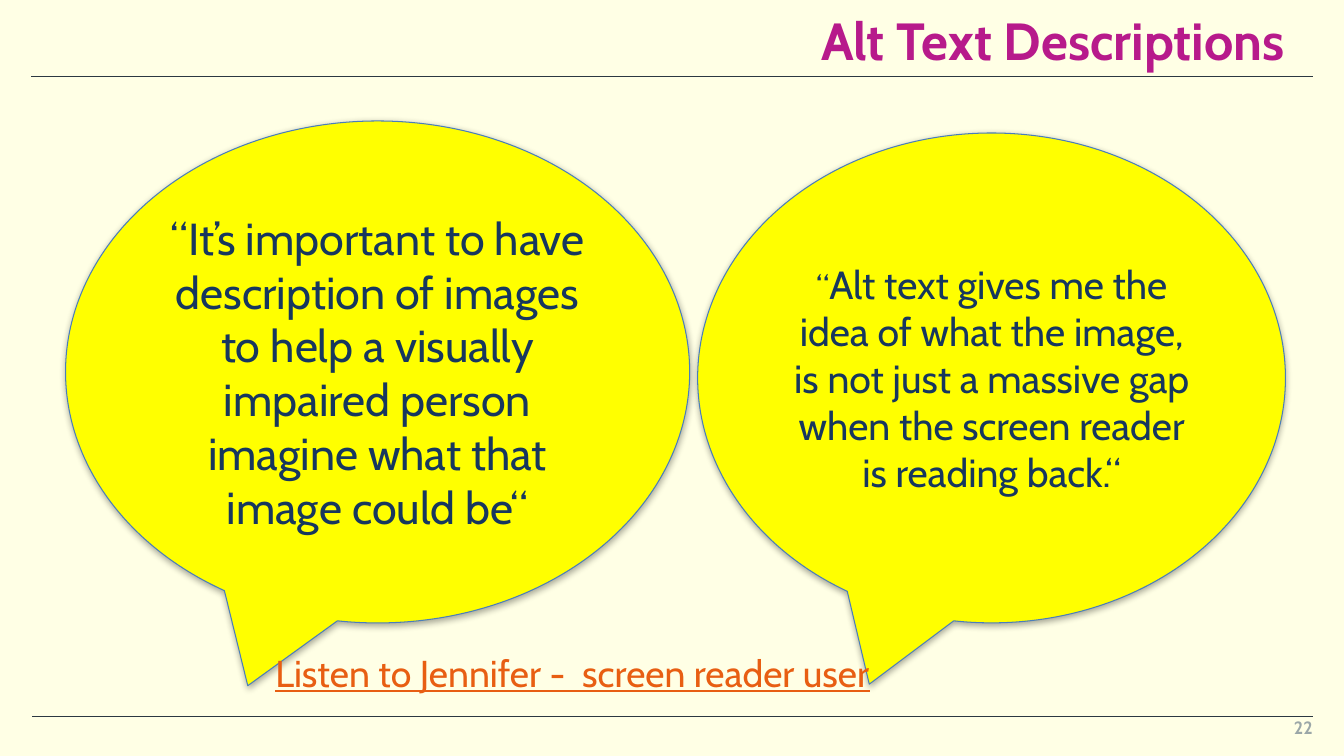
from dataclasses import dataclass

import pptx
import pptx.dml.color
import pptx.enum.shapes
import pptx.enum.text
import pptx.oxml
import pptx.oxml.ns
import pptx.util

PX = 9144  # EMU per px, 100 px to the inch
ALIGN = pptx.enum.text.PP_ALIGN
ANCHOR = pptx.enum.text.MSO_ANCHOR


@dataclass(frozen=True)
class Theme:
    font: str = "Cabin"
    background: str = "FFFFE5"
    rule: str = "2C3841"
    title: str = "B71A8B"
    bubble: str = "FFFF00"
    outline: str = "4A7EBB"
    quote: str = "17375E"
    link: str = "E85E12"
    number: str = "9BA7A8"
    title_pt: float = 37.3
    quote_large_pt: float = 32
    quote_pt: float = 28
    quote_mark_pt: float = 24
    link_pt: float = 26.7
    number_pt: float = 12.7


THEME = Theme()


@dataclass(frozen=True)
class Box:
    left: int
    top: int
    width: int
    height: int

    def emu(self) -> tuple[int, int, int, int]:
        return self.left * PX, self.top * PX, self.width * PX, self.height * PX


@dataclass(frozen=True)
class Run:
    text: str
    size: float
    color: str
    bold: bool = False
    underline: bool = False


@dataclass(frozen=True)
class Label:
    box: Box
    run: Run
    align: ALIGN
    anchor: ANCHOR = ANCHOR.TOP
    inset: bool = False
    line_spacing: float = 1.0


@dataclass(frozen=True)
class Bubble:
    box: Box
    runs: tuple[Run, ...]


@dataclass(frozen=True)
class Rule:
    left: int
    right: int
    y: int


RULES = (Rule(31, 1302, 76), Rule(32, 1302, 711))

BUBBLES = (
    Bubble(Box(65, 120, 619, 498), (
        Run("“It’s important to have description of images to help a visually "
            "impaired person imagine what that image could be“",
            THEME.quote_large_pt, THEME.quote),
    )),
    Bubble(Box(692, 132, 583, 486), (
        Run("“", THEME.quote_mark_pt, THEME.quote),
        Run("Alt text gives me the idea of what the image, is not just a massive "
            "gap when the screen reader is reading back.“",
            THEME.quote_pt, THEME.quote),
    )),
)

LABELS = (
    Label(Box(374, 0, 900, 71),
          Run("Alt Text Descriptions", THEME.title_pt, THEME.title, bold=True),
          ALIGN.RIGHT, ANCHOR.BOTTOM, line_spacing=0.9),
    Label(Box(231, 640, 674, 55),
          Run("Listen to Jennifer -  screen reader user", THEME.link_pt,
              THEME.link, underline=True),
          ALIGN.CENTER, inset=True),
    Label(Box(1197, 711, 105, 24),
          Run("22", THEME.number_pt, THEME.number, bold=True), ALIGN.RIGHT),
)


def rgb(color: str) -> pptx.dml.color.RGBColor:
    return pptx.dml.color.RGBColor.from_string(color)


def add_run(p, run: Run) -> None:
    r = p.add_run()
    r.text = run.text
    r.font.name = THEME.font
    r.font.size = pptx.util.Pt(run.size)
    r.font.color.rgb = rgb(run.color)
    r.font.bold = run.bold
    r.font.underline = run.underline


def add_rule(s, rule: Rule) -> None:
    line = s.shapes.add_connector(
        pptx.enum.shapes.MSO_CONNECTOR.STRAIGHT,
        rule.left * PX, rule.y * PX, rule.right * PX, rule.y * PX)
    line.line.color.rgb = rgb(THEME.rule)
    line.line.width = pptx.util.Pt(0.5)
    line._element.spPr.append(pptx.oxml.parse_xml(
        f'<a:effectLst {pptx.oxml.ns.nsdecls("a")}/>'))


def add_drop_shadow(sp) -> None:
    sp.shadow.inherit = False
    effects = sp._element.spPr.find(pptx.oxml.ns.qn("a:effectLst"))
    effects.append(pptx.oxml.parse_xml(
        f'<a:outerShdw {pptx.oxml.ns.nsdecls("a")} blurRad="{pptx.util.Pt(5)}" '
        f'dist="{pptx.util.Pt(1.8)}" dir="5400000" rotWithShape="0">'
        '<a:srgbClr val="000000"><a:alpha val="35000"/></a:srgbClr>'
        '</a:outerShdw>'))


def add_bubble(s, bubble: Bubble) -> None:
    sp = s.shapes.add_shape(
        pptx.enum.shapes.MSO_SHAPE.OVAL_CALLOUT, *bubble.box.emu())
    sp.adjustments[0] = -0.208
    sp.adjustments[1] = 0.625
    sp.fill.solid()
    sp.fill.fore_color.rgb = rgb(THEME.bubble)
    sp.line.color.rgb = rgb(THEME.outline)
    sp.line.width = pptx.util.Pt(0.75)
    add_drop_shadow(sp)
    tf = sp.text_frame
    tf.word_wrap = True
    tf.vertical_anchor = ANCHOR.MIDDLE
    p = tf.paragraphs[0]
    p.alignment = ALIGN.CENTER
    for run in bubble.runs:
        add_run(p, run)


def add_label(s, label: Label) -> None:
    tf = s.shapes.add_textbox(*label.box.emu()).text_frame
    tf.word_wrap = True
    tf.vertical_anchor = label.anchor
    if not label.inset:
        tf.margin_left = tf.margin_top = tf.margin_right = tf.margin_bottom = 0
    p = tf.paragraphs[0]
    p.alignment = label.align
    p.line_spacing = label.line_spacing
    add_run(p, label.run)


def main() -> None:
    prs = pptx.Presentation()
    prs.slide_width = 1333 * PX
    prs.slide_height = 750 * PX
    s = prs.slides.add_slide(prs.slide_layouts[6])
    s.background.fill.solid()
    s.background.fill.fore_color.rgb = rgb(THEME.background)
    for rule in RULES:
        add_rule(s, rule)
    for bubble in BUBBLES:
        add_bubble(s, bubble)
    for label in LABELS:
        add_label(s, label)
    prs.save("out.pptx")


if __name__ == "__main__":
    main()
